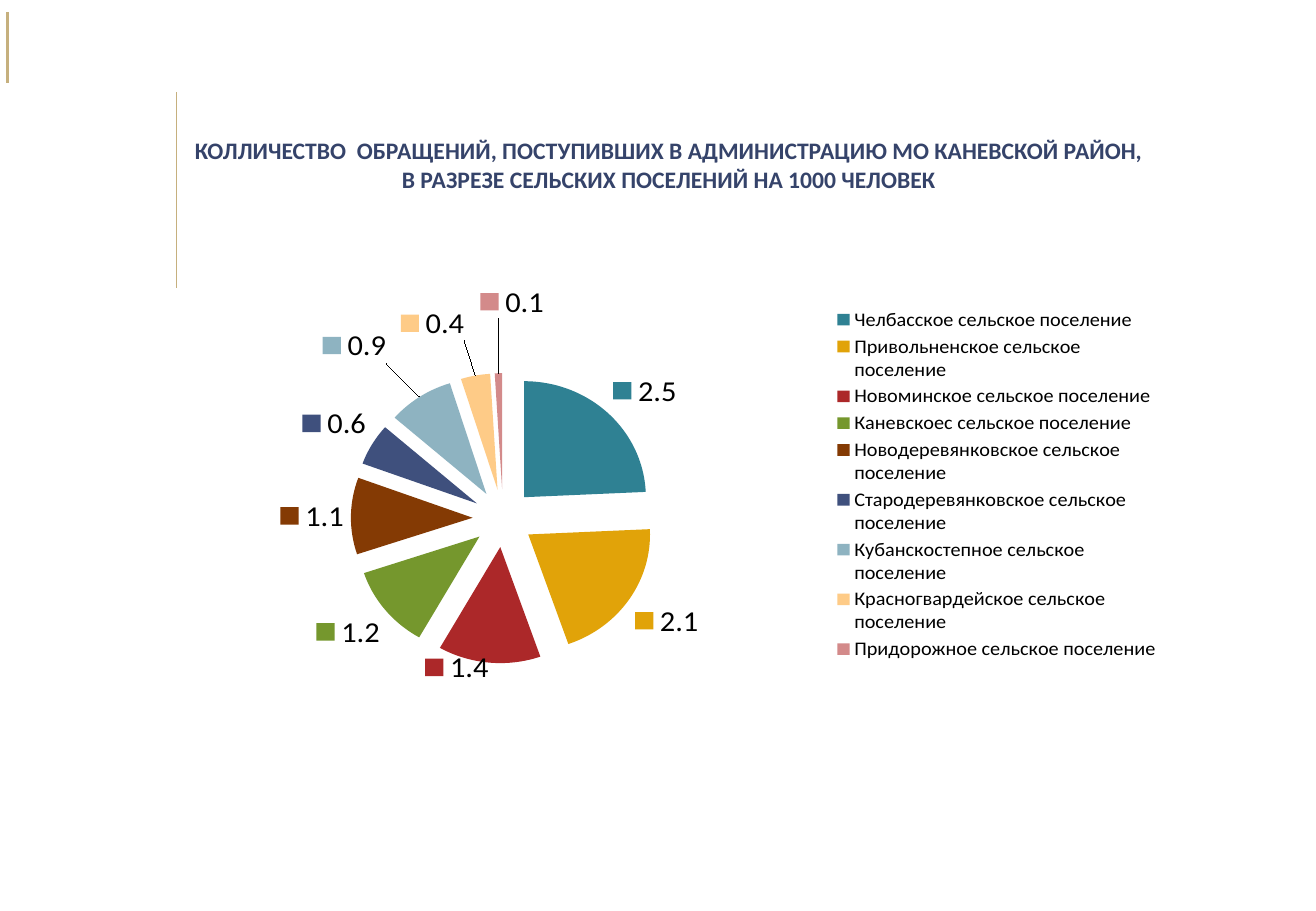
from lxml.etree import SubElement
from pptx import Presentation
from pptx.chart.data import CategoryChartData
from pptx.dml.color import RGBColor
from pptx.enum.chart import XL_CHART_TYPE as ChartType
from pptx.enum.chart import XL_LABEL_POSITION as LabelPosition
from pptx.enum.chart import XL_LEGEND_POSITION as LegendPosition
from pptx.enum.shapes import MSO_CONNECTOR as Connector
from pptx.enum.text import MSO_ANCHOR as Anchor
from pptx.enum.text import MSO_AUTO_SIZE as AutoSize
from pptx.enum.text import PP_ALIGN as Align
from pptx.oxml import parse_xml
from pptx.oxml.ns import nsdecls, qn
from pptx.util import Inches, Pt

WIDTH, HEIGHT = Inches(10.83), Inches(7.5)
FONT = "Calibri"
COLORS = {"title": "35436A", "rule": "C6B07E", "text": "000000"}
TITLE = ("КОЛЛИЧЕСТВО  ОБРАЩЕНИЙ, ПОСТУПИВШИХ В АДМИНИСТРАЦИЮ МО КАНЕВСКОЙ РАЙОН, "
         "В РАЗРЕЗЕ СЕЛЬСКИХ ПОСЕЛЕНИЙ НА 1000 ЧЕЛОВЕК")
SETTLEMENTS = [
    ("Челбасское", 2.5, "2F8193"),
    ("Привольненское", 2.1, "E1A309"),
    ("Новоминское", 1.4, "AC2829"),
    ("Каневскоес", 1.2, "75972D"),
    ("Новодеревянковское", 1.1, "843A04"),
    ("Стародеревянковское", 0.6, "3F507D"),
    ("Кубанскостепное", 0.9, "8EB3C1"),
    ("Красногвардейское", 0.4, "FECB87"),
    ("Придорожное", 0.1, "D38A8A"),
]
LABEL_SHIFTS = {2: (0, -4), 6: (-3, -7), 7: (-1, -7), 8: (1.4, -12)}
PLOT_AREA = (1.4, 22.2, 62.9, 72.4)
LEGEND_AREA = (65.7, 5, 33.5, 90)
LEFT = 13.39


def across(percent):
    return round(WIDTH * percent / 100)


def down(percent):
    return round(HEIGHT * percent / 100)


def box(left, top, width, height):
    return across(left), down(top), across(width), down(height)


def format_font(font, size, color, bold=False):
    font.name, font.size, font.bold = FONT, Pt(size), bold
    font.color.rgb = RGBColor.from_string(color)


def write_text(frame, text, size, color, bold=False, align=Align.LEFT):
    frame.word_wrap = True
    frame.auto_size = AutoSize.NONE
    frame.vertical_anchor = Anchor.TOP
    paragraph = frame.paragraphs[0]
    paragraph.alignment = align
    run = paragraph.add_run()
    run.text = text
    format_font(run.font, size, color, bold)


def add_title(slide):
    title = slide.shapes.title
    title.left, title.top, title.width, title.height = box(LEFT, 14.27, 74.88, 7.6)
    write_text(title.text_frame, TITLE, size=14, color=COLORS["title"],
               bold=True, align=Align.CENTER)


def add_rule(slide, left, top, bottom, weight):
    rule = slide.shapes.add_connector(
        Connector.STRAIGHT, across(left), down(top), across(left), down(bottom))
    rule.line.width = Pt(weight)
    rule.line.color.rgb = RGBColor.from_string(COLORS["rule"])
    SubElement(rule.element.spPr, qn("a:effectLst"))


def make_layout(area, target=""):
    settings = [("layoutTarget", target)] if target else []
    if len(area) == 4:
        settings += [("xMode", "edge"), ("yMode", "edge")]
    settings += [(key, share / 100) for key, share in zip("xywh", area)]
    children = "".join(f'<c:{key} val="{value}"/>' for key, value in settings)
    return parse_xml(f'<c:layout {nsdecls("c")}><c:manualLayout>{children}'
                     "</c:manualLayout></c:layout>")


def set_layout(parent, layout, index):
    for existing in parent.findall(qn("c:layout")):
        parent.remove(existing)
    parent.insert(index, layout)


def format_legend(chart):
    chart.has_legend = True
    legend = chart.legend
    legend.position = LegendPosition.CORNER
    legend.include_in_layout = False
    format_font(legend.font, 12, COLORS["text"])
    element = chart.element.find(".//" + qn("c:legend"))
    set_layout(element, make_layout(LEGEND_AREA), 1)


def format_labels(series, series_element):
    labels = series.data_labels
    labels.show_value = True
    labels.show_legend_key = True
    labels.number_format = "General"
    labels.number_format_is_linked = False
    labels.position = LabelPosition.OUTSIDE_END
    format_font(labels.font, 18, COLORS["text"])
    for index in LABEL_SHIFTS:
        series.points[index].data_label.position = LabelPosition.OUTSIDE_END
    for label in series_element.iter(qn("c:dLbl")):
        index = int(label.find(qn("c:idx")).get("val"))
        label.find(qn("c:showLegendKey")).set("val", "1")
        set_layout(label, make_layout(LABEL_SHIFTS[index]), 1)
    group = series_element.find(qn("c:dLbls"))
    leader = group.find(qn("c:showLeaderLines"))
    if leader is None:
        leader = SubElement(group, qn("c:showLeaderLines"))
    leader.set("val", "1")


def add_pie(slide):
    data = CategoryChartData()
    data.categories = [f"{name} сельское поселение" for name, _, _ in SETTLEMENTS]
    data.add_series("Series 1", [value for _, value, _ in SETTLEMENTS])
    chart = slide.shapes.add_chart(
        ChartType.PIE, *box(LEFT, 31.2, 75.62, 46.13), data).chart
    chart.has_title = False
    format_font(chart.font, 18, COLORS["text"])
    format_legend(chart)
    plot = chart.plots[0]
    plot.vary_by_categories = True
    series = plot.series[0]
    for index, (_, _, color) in enumerate(SETTLEMENTS):
        fill = series.points[index].format.fill
        fill.solid()
        fill.fore_color.rgb = RGBColor.from_string(color)
    series_element = chart.element.find(".//" + qn("c:ser"))
    explosion = parse_xml(f'<c:explosion {nsdecls("c")} val="25"/>')
    series_element.find(qn("c:dPt")).addprevious(explosion)
    format_labels(series, series_element)
    plot_area = chart.element.find(".//" + qn("c:plotArea"))
    set_layout(plot_area, make_layout(PLOT_AREA, "inner"), 0)


def main():
    presentation = Presentation()
    presentation.slide_width, presentation.slide_height = WIDTH, HEIGHT
    slide = presentation.slides.add_slide(presentation.slide_layouts[5])
    add_rule(slide, 0.55, 1.33, 9.07, 2)
    add_title(slide)
    add_rule(slide, LEFT, 10.13, 31.6, 0.5)
    add_pie(slide)
    presentation.save("out.pptx")


if __name__ == "__main__":
    main()
